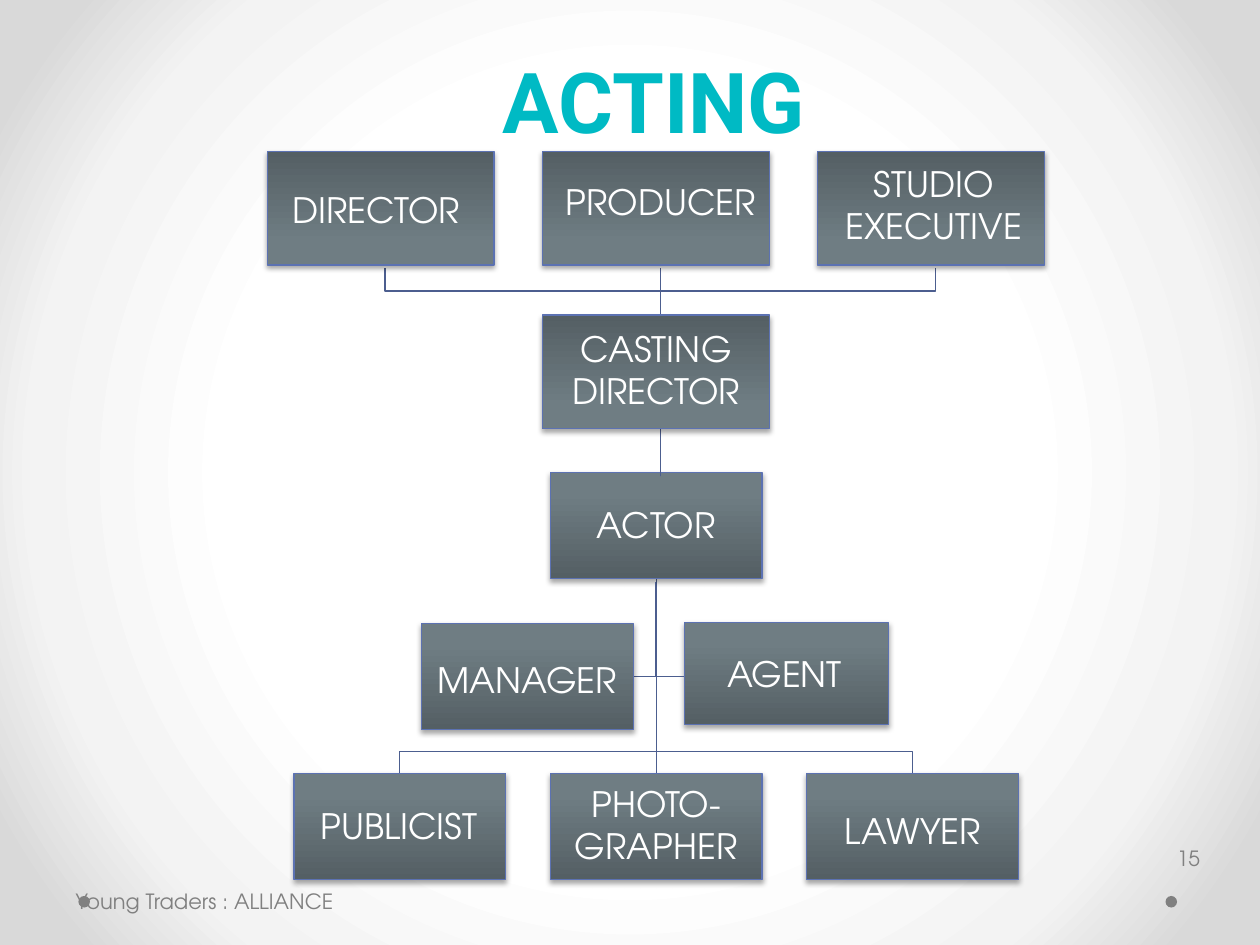
"""Build the acting organisation chart slide."""
from typing import NamedTuple

from lxml.etree import SubElement
from pptx import Presentation
from pptx.dml.color import RGBColor
from pptx.enum.shapes import MSO_CONNECTOR, MSO_SHAPE
from pptx.enum.text import MSO_ANCHOR, MSO_AUTO_SIZE, PP_ALIGN
from pptx.oxml import parse_xml
from pptx.oxml.ns import nsdecls, qn
from pptx.util import Pt

TEAL = RGBColor(0x00, 0xBA, 0xC4)
WHITE = RGBColor(0xFF, 0xFF, 0xFF)
GREY = RGBColor(0x80, 0x80, 0x80)
SLATE_DARK = RGBColor(0x54, 0x5F, 0x64)
SLATE_LIGHT = RGBColor(0x6F, 0x7D, 0x83)
BORDER = RGBColor(0x5C, 0x72, 0xB2)
LINK = RGBColor(0x4C, 0x5E, 0x8F)
EDGE_STOPS = (
    (50, WHITE),
    (76, RGBColor(0xF3, 0xF3, 0xF3)),
    (92, RGBColor(0xD9, 0xD9, 0xD9)),
)

BODY_FONT = "TeX Gyre Adventor"
TITLE_FONT = "Roboto"
LABEL_WIDTH = 136
LINE_HEIGHT = 24
HIRING_X, HIRING_STEP = 377.3, 157.2
TEAM_X, TEAM_STEP = 375, 146.5


class Box(NamedTuple):
    left: float
    top: float
    width: float
    height: float


class Role(NamedTuple):
    name: str
    box: Box
    label_left: float
    label_top: float
    lines: int = 1


def hiring_box(column, top):
    return Box(310 + column * HIRING_STEP, top, 129.6, 65)


def team_box(column, top):
    return Box(314.5 + column * TEAM_STEP, top, 121, 60.5)


HIRING = [
    Role("DIRECTOR", hiring_box(-1, 86.4), 147, 107.5),
    Role("PRODUCER", hiring_box(0, 86.4), 309.6, 103.3),
    Role("STUDIO EXECUTIVE", hiring_box(1, 86.4), 465.6, 92.8, 2),
    Role("CASTING DIRECTOR", hiring_box(0, 180), 307, 187.3, 2),
]
TEAM = [
    Role("ACTOR", team_box(0, 270), 307, 287.5),
    Role("PUBLICIST", team_box(-1, 442), 160, 459.5),
    Role("PHOTO-GRAPHER", team_box(0, 442), 307, 447.3, 2),
    Role("LAWYER", team_box(1, 442), 453.6, 462.5),
    Role("MANAGER", Box(241, 356.4, 121, 60.5), 233.3, 376),
    Role("AGENT", Box(391, 355.7, 116.6, 58.3), 380.3, 373),
]


def paint_background(slide) -> None:
    slide.background.fill.gradient()
    default = slide.element.find(".//" + qn("a:gradFill"))
    stops = "".join(
        f'<a:gs pos="{position * 1000}"><a:srgbClr val="{color}"/></a:gs>'
        for position, color in EDGE_STOPS
    )
    radial = parse_xml(
        f'<a:gradFill {nsdecls("a")} rotWithShape="1"><a:gsLst>{stops}</a:gsLst>'
        '<a:path path="circle"><a:fillToRect l="50000" t="50000" r="50000" b="50000"/>'
        "</a:path></a:gradFill>"
    )
    default.getparent().replace(default, radial)


def style_link(link) -> None:
    link.line.color.rgb = LINK
    link.line.width = Pt(0.75)


def draw_elbow(slide, *points: tuple[float, float]) -> None:
    start, *corners = [(Pt(x), Pt(y)) for x, y in points]
    builder = slide.shapes.build_freeform(*start)
    builder.add_line_segments(corners, close=False)
    elbow = builder.convert_to_shape()
    elbow.fill.background()
    elbow.shadow.inherit = False
    style_link(elbow)


def draw_trunk(slide, x: float, top: float, bottom: float):
    trunk = slide.shapes.add_connector(
        MSO_CONNECTOR.STRAIGHT, Pt(x), Pt(top), Pt(x), Pt(bottom)
    )
    style_link(trunk)
    SubElement(trunk.element.spPr, qn("a:effectLst"))
    return trunk


def draw_box(slide, box: Box, angle: int):
    card = slide.shapes.add_shape(MSO_SHAPE.RECTANGLE, *map(Pt, box))
    card.fill.gradient()
    card.fill.gradient_angle = angle
    dark, light = card.fill.gradient_stops
    dark.color.rgb, dark.position = SLATE_DARK, 0
    light.color.rgb, light.position = SLATE_LIGHT, 0.8
    card.line.color.rgb = BORDER
    card.line.width = Pt(0.75)
    card.shadow.inherit = False
    effects = card.element.spPr.find(qn("a:effectLst"))
    effects.append(parse_xml(
        f'<a:outerShdw {nsdecls("a")} blurRad="{Pt(3)}" dist="{Pt(1.8)}" dir="5400000" '
        'rotWithShape="0"><a:srgbClr val="000000"><a:alpha val="35000"/></a:srgbClr>'
        "</a:outerShdw>"
    ))
    return card


def set_text(holder, text: str, font: str, size: float, color: RGBColor,
             align: PP_ALIGN, anchor: MSO_ANCHOR) -> None:
    frame = holder.text_frame
    frame.text = text
    frame.word_wrap = True
    frame.auto_size = MSO_AUTO_SIZE.NONE
    frame.vertical_anchor = anchor
    frame.margin_left = frame.margin_right = frame.margin_top = frame.margin_bottom = 0
    paragraph = frame.paragraphs[0]
    paragraph.alignment = align
    run = paragraph.runs[0]
    run.font.name = font
    run.font.size = Pt(size)
    run.font.color.rgb = color


def add_text(slide, text: str, box: Box, size: float, color: RGBColor,
             align: PP_ALIGN) -> None:
    holder = slide.shapes.add_textbox(*map(Pt, box))
    set_text(holder, text, BODY_FONT, size, color, align, MSO_ANCHOR.MIDDLE)


def add_title(slide) -> None:
    title = slide.shapes.title
    title.left, title.top, title.width, title.height = map(Pt, (49.7, -18.7, 648, 104.4))
    set_text(title, "ACTING", TITLE_FONT, 48, TEAL, PP_ALIGN.CENTER, MSO_ANCHOR.BOTTOM)
    heading = title.text_frame.paragraphs[0]
    heading.line_spacing = Pt(58)
    heading.runs[0].font.bold = True


def add_footer(slide) -> None:
    for left in (666, 44.8):
        dot = slide.shapes.add_shape(MSO_SHAPE.OVAL, Pt(left), Pt(512), Pt(6.6), Pt(6.6))
        dot.fill.solid()
        dot.fill.fore_color.rgb = GREY
        dot.line.fill.background()
        dot.shadow.inherit = False
    add_text(slide, "Young Traders : ALLIANCE", Box(43.2, 507.6, 224, 15), 12, GREY,
             PP_ALIGN.LEFT)
    add_text(slide, "15", Box(672.5, 483, 44, 15), 12, GREY, PP_ALIGN.LEFT)


def add_team(slide) -> None:
    draw_elbow(slide, (TEAM_X, 330.5), (TEAM_X, 386.6), (362, 386.6))
    for side in (1, -1):
        end = TEAM_X + side * TEAM_STEP
        draw_elbow(slide, (TEAM_X, 330.5), (TEAM_X, 429.3), (end, 429.3), (end, 442))
    trunk = draw_trunk(slide, TEAM_X, 330.5, 442)
    cards = {role.name: draw_box(slide, role.box, 90) for role in TEAM}
    trunk.begin_connect(cards["ACTOR"], 2)
    trunk.end_connect(cards["PHOTO-GRAPHER"], 0)
    draw_elbow(slide, (374.4, 332.6), (374.4, 386.6), (391, 386.6))


def add_hiring(slide) -> None:
    draw_elbow(slide, (HIRING_X, 272.2), (HIRING_X, 212.4), (363.6, 212.4))
    for side in (1, -1):
        end = HIRING_X + side * HIRING_STEP
        draw_elbow(slide, (HIRING_X, 272.2), (HIRING_X, 166.3), (end, 166.3), (end, 153.4))
    draw_trunk(slide, HIRING_X, 153.4, 272.2)
    for role in HIRING:
        draw_box(slide, role.box, 270)


def main() -> None:
    deck = Presentation()
    deck.slide_width, deck.slide_height = Pt(720), Pt(540)
    slide = deck.slides.add_slide(deck.slide_layouts[5])
    paint_background(slide)
    add_footer(slide)
    add_title(slide)
    add_team(slide)
    add_hiring(slide)
    for role in HIRING + TEAM:
        label = Box(role.label_left, role.label_top, LABEL_WIDTH, LINE_HEIGHT * role.lines)
        add_text(slide, role.name, label, 20, WHITE, PP_ALIGN.CENTER)
    deck.save("out.pptx")


if __name__ == "__main__":
    main()
